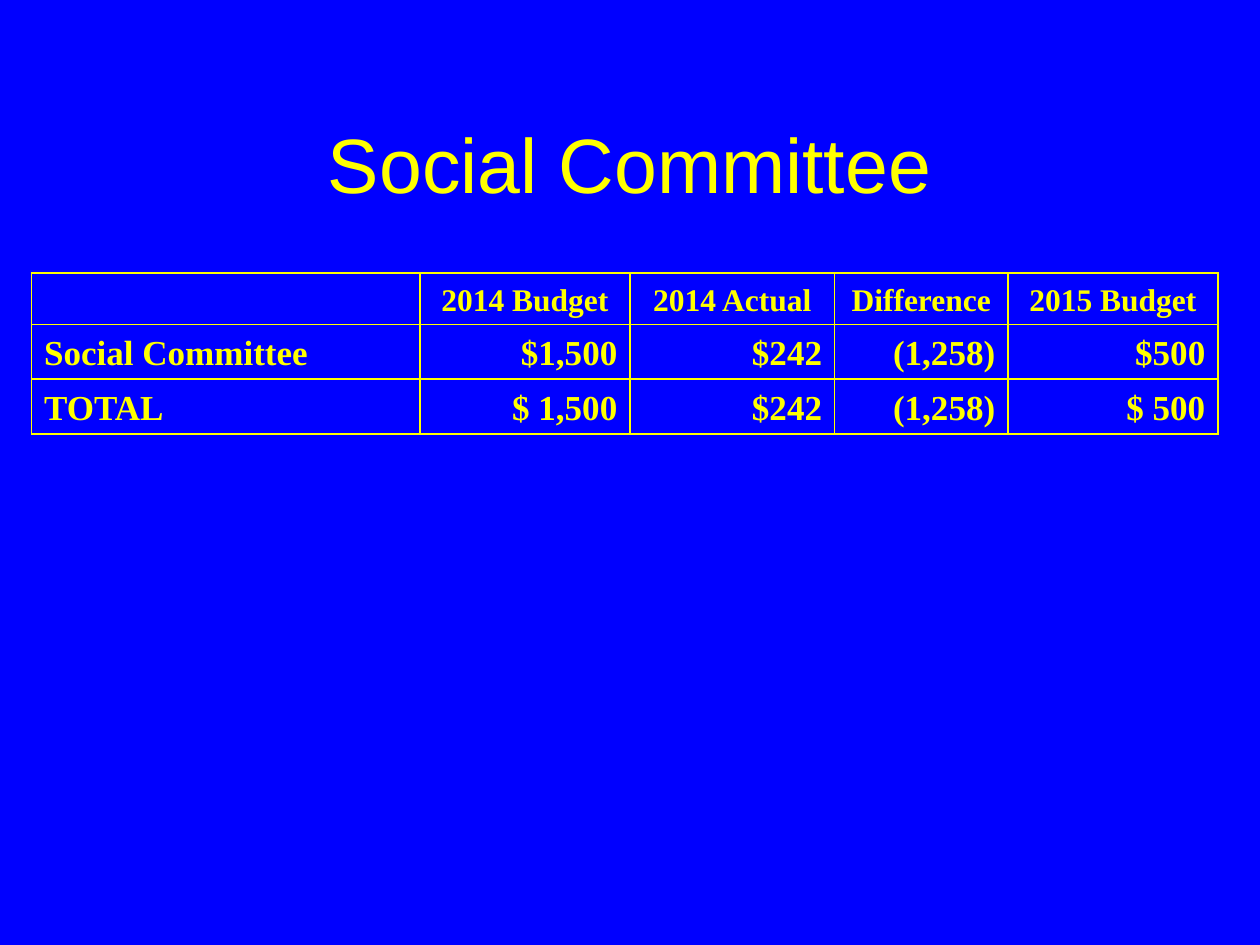
from lxml import etree
from pptx import Presentation
from pptx import util as u
from pptx.dml.color import RGBColor
from pptx.enum import text
from pptx.oxml.ns import qn

BLUE, YELLOW = "0000FF", "FFFF00"
COLUMN_WIDTHS = [222, 120, 117, 99, 120]
ROW_HEIGHT = 29.5
BUDGET = [
    ["", "2014 Budget", "2014 Actual", "Difference", "2015 Budget"],
    ["Social Committee", "$1,500", "$242", "(1,258)", "$500"],
    ["TOTAL", "$ 1,500", "$242", "(1,258)", "$ 500"],
]


def color(value):
    return RGBColor.from_string(value)


class BudgetSlide:
    """Draws yellow titles and ruled tables on a blue slide."""

    def __init__(self, slide):
        self.slide = slide
        self.ink = YELLOW
        fill = slide.background.fill
        fill.solid()
        fill.fore_color.rgb = color(BLUE)

    def format(self, paragraph, font, size, align, bold=False):
        paragraph.alignment = align
        for run in paragraph.runs:
            run.font.name = font
            run.font.size = u.Pt(size)
            run.font.bold = bold
            run.font.color.rgb = color(self.ink)

    def title(self, words, left, top, width, height):
        shape = self.slide.shapes.add_textbox(*map(u.Pt, (left, top, width, height)))
        frame = shape.text_frame
        frame.text = words
        frame.word_wrap = True
        frame.vertical_anchor = text.MSO_ANCHOR.MIDDLE
        self.format(frame.paragraphs[0], "Arial", 44, text.PP_ALIGN.CENTER)

    def borders(self, cell):
        properties = cell._tc.get_or_add_tcPr()
        for index, side in enumerate(("lnL", "lnR", "lnT", "lnB")):
            line = etree.Element(qn(f"a:{side}"), w=str(u.Pt(1)))
            fill = etree.SubElement(line, qn("a:solidFill"))
            etree.SubElement(fill, qn("a:srgbClr"), val=self.ink)
            properties.insert(index, line)

    def table(self, rows, left, top, widths, row_height):
        shape = self.slide.shapes.add_table(
            len(rows), len(widths), u.Pt(left), u.Pt(top),
            u.Pt(sum(widths)), u.Pt(row_height * len(rows)))
        table = shape.table
        for column, width in zip(table.columns, widths):
            column.width = u.Pt(width)
        for row_index, row in enumerate(rows):
            table.rows[row_index].height = u.Pt(row_height)
            for column_index, words in enumerate(row):
                if row_index == 0:
                    size, align = 18, text.PP_ALIGN.CENTER
                else:
                    size = 20
                    align = text.PP_ALIGN.RIGHT if column_index else text.PP_ALIGN.LEFT
                cell = table.cell(row_index, column_index)
                cell.text_frame.text = words
                cell.vertical_anchor = text.MSO_ANCHOR.BOTTOM
                cell.fill.background()
                self.format(cell.text_frame.paragraphs[0], "Times New Roman", size, align, True)
                self.borders(cell)


def main():
    presentation = Presentation()
    presentation.slide_width, presentation.slide_height = u.Pt(720), u.Pt(540)
    slide = BudgetSlide(presentation.slides.add_slide(presentation.slide_layouts[6]))
    slide.title("Social Committee", 54, 48, 612, 90)
    slide.table(BUDGET, 18, 156, COLUMN_WIDTHS, ROW_HEIGHT)
    presentation.save("out.pptx")


if __name__ == "__main__":
    main()
